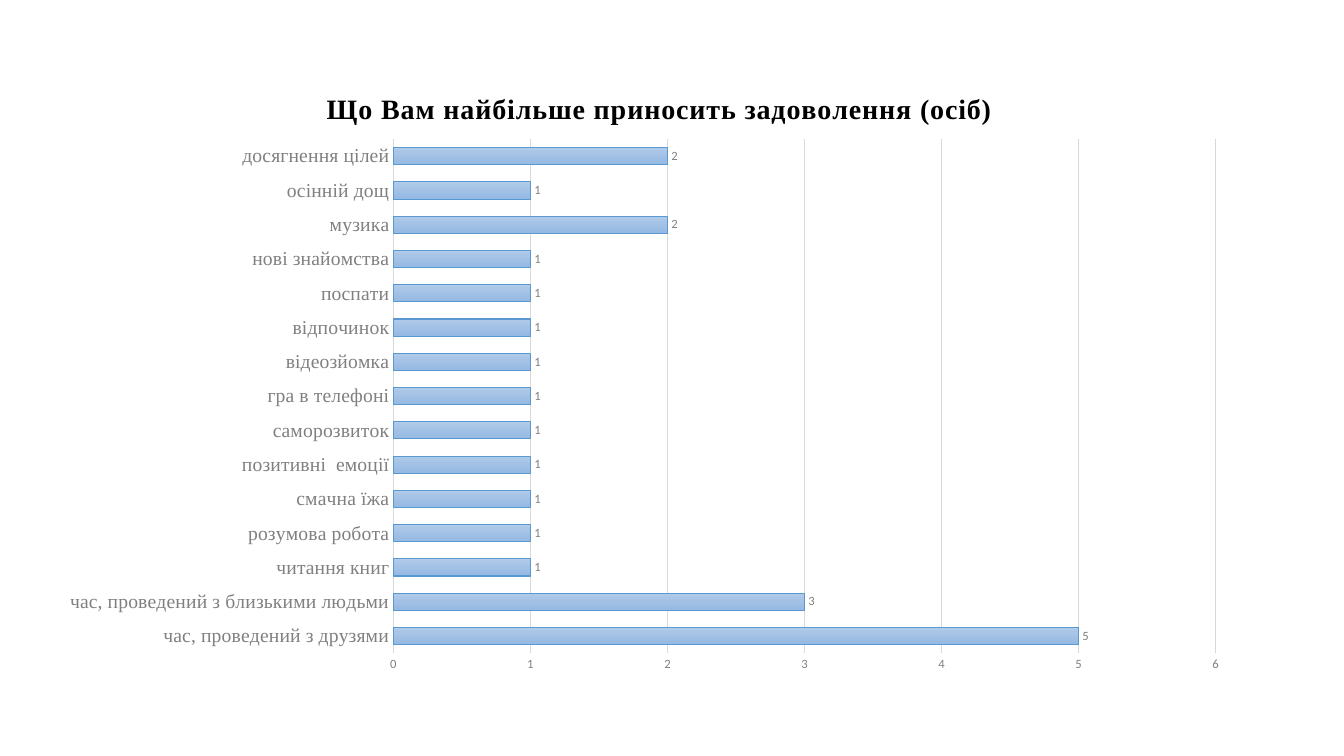
"""Build a slide with a bar chart of what brings people the most pleasure."""
from copy import deepcopy
from dataclasses import dataclass

from lxml.etree import SubElement
from pptx import Presentation
from pptx.chart.data import CategoryChartData
from pptx.dml.color import RGBColor
from pptx.enum.chart import XL_CHART_TYPE as ChartType
from pptx.enum.chart import XL_LABEL_POSITION as LabelPosition
from pptx.enum.chart import XL_TICK_MARK as TickMark
from pptx.oxml.ns import qn
from pptx.util import Inches, Pt

SERIF, SANS = "Times New Roman", "Calibri"
GREY, GRID = "808080", "D9D9D9"
BAR_STOPS = ((0, "B1CBE9"), (0.5, "A3C1E5"), (1, "93B9E4"))


@dataclass(frozen=True)
class Pleasure:
    source: str
    people: int


PLEASURES = [
    Pleasure("час, проведений з друзями", 5),
    Pleasure("час, проведений з близькими людьми", 3),
    Pleasure("читання книг", 1),
    Pleasure("розумова робота", 1),
    Pleasure("смачна їжа", 1),
    Pleasure("позитивні  емоції", 1),
    Pleasure("саморозвиток", 1),
    Pleasure("гра в телефоні", 1),
    Pleasure("відеозйомка", 1),
    Pleasure("відпочинок", 1),
    Pleasure("поспати", 1),
    Pleasure("нові знайомства", 1),
    Pleasure("музика", 2),
    Pleasure("осінній дощ", 1),
    Pleasure("досягнення цілей", 2),
]


def rgb(value: str) -> RGBColor:
    return RGBColor.from_string(value)


def style_font(font, name: str, size: float, color: str, bold: bool = False) -> None:
    font.name, font.size, font.bold = name, Pt(size), bold
    font.color.rgb = rgb(color)


def style_line(line, color: str) -> None:
    line.color.rgb = rgb(color)
    line.width = Pt(0.75)


def place(parent, before: str, **settings) -> None:
    """Give a chart part a manual layout ahead of the named child."""
    for old in parent.findall(qn("c:layout")):
        parent.remove(old)
    layout = SubElement(parent, qn("c:layout"))
    manual = SubElement(layout, qn("c:manualLayout"))
    for tag, value in settings.items():
        SubElement(manual, qn(f"c:{tag}")).set("val", str(value))
    parent.find(qn(before)).addprevious(layout)


def style_title(chart) -> None:
    heading = chart.chart_title
    heading.text_frame.text = "Що Вам найбільше приносить задоволення (осіб)"
    heading.include_in_layout = False
    run = heading.text_frame.paragraphs[0].runs[0]
    style_font(run.font, SERIF, 20, "000000", bold=True)
    run.font._element.set("spc", "50")
    place(heading._element, "c:overlay", xMode="edge", yMode="edge", x=0.23, y=0.04)


def style_axes(chart) -> None:
    sources, people = chart.category_axis, chart.value_axis
    for axis, font, size in ((sources, SERIF, 14), (people, SANS, 9)):
        style_font(axis.tick_labels.font, font, size, GREY)
        axis.major_tick_mark = axis.minor_tick_mark = TickMark.NONE
    style_line(sources.format.line, GRID)
    sources.has_major_gridlines = False
    people.minimum_scale, people.maximum_scale, people.major_unit = 0, 6, 1
    people.format.line.fill.background()
    style_line(people.major_gridlines.format.line, GRID)


def style_bars(chart) -> None:
    plot = chart.plots[0]
    plot.gap_width = 100
    plot.vary_by_categories = False
    bars = plot.series[0]
    bars.invert_if_negative = False
    fill = bars.format.fill
    fill.gradient()
    fill.gradient_angle = 270
    stop_list = bars._element.find(f".//{qn('a:gsLst')}")
    stop_list.append(deepcopy(stop_list[-1]))
    for stop, (position, color) in zip(fill.gradient_stops, BAR_STOPS):
        stop.position = position
        stop.color.rgb = rgb(color)
    style_line(bars.format.line, "5998D0")
    labels = bars.data_labels
    labels.show_value = True
    labels.position = LabelPosition.OUTSIDE_END
    style_font(labels.font, SANS, 9, GREY)


def main() -> None:
    deck = Presentation()
    deck.slide_width, deck.slide_height = Inches(13.33), Inches(7.5)
    slide = deck.slides.add_slide(deck.slide_layouts[6])
    survey = CategoryChartData()
    survey.categories = [pleasure.source for pleasure in PLEASURES]
    survey.add_series("Series 1", [pleasure.people for pleasure in PLEASURES])
    chart = slide.shapes.add_chart(
        ChartType.BAR_CLUSTERED,
        Inches(0.46), Inches(0.6), Inches(11.87), Inches(6.19), survey,
    ).chart
    chart.has_legend = False
    style_font(chart.font, SANS, 10, "000000")
    style_title(chart)
    style_axes(chart)
    style_bars(chart)
    place(
        chart._chartSpace.chart.plotArea, "c:barChart", layoutTarget="inner",
        xMode="edge", yMode="edge", x=0.29, y=0.126, w=0.687, h=0.824,
    )
    deck.save("out.pptx")


if __name__ == "__main__":
    main()
